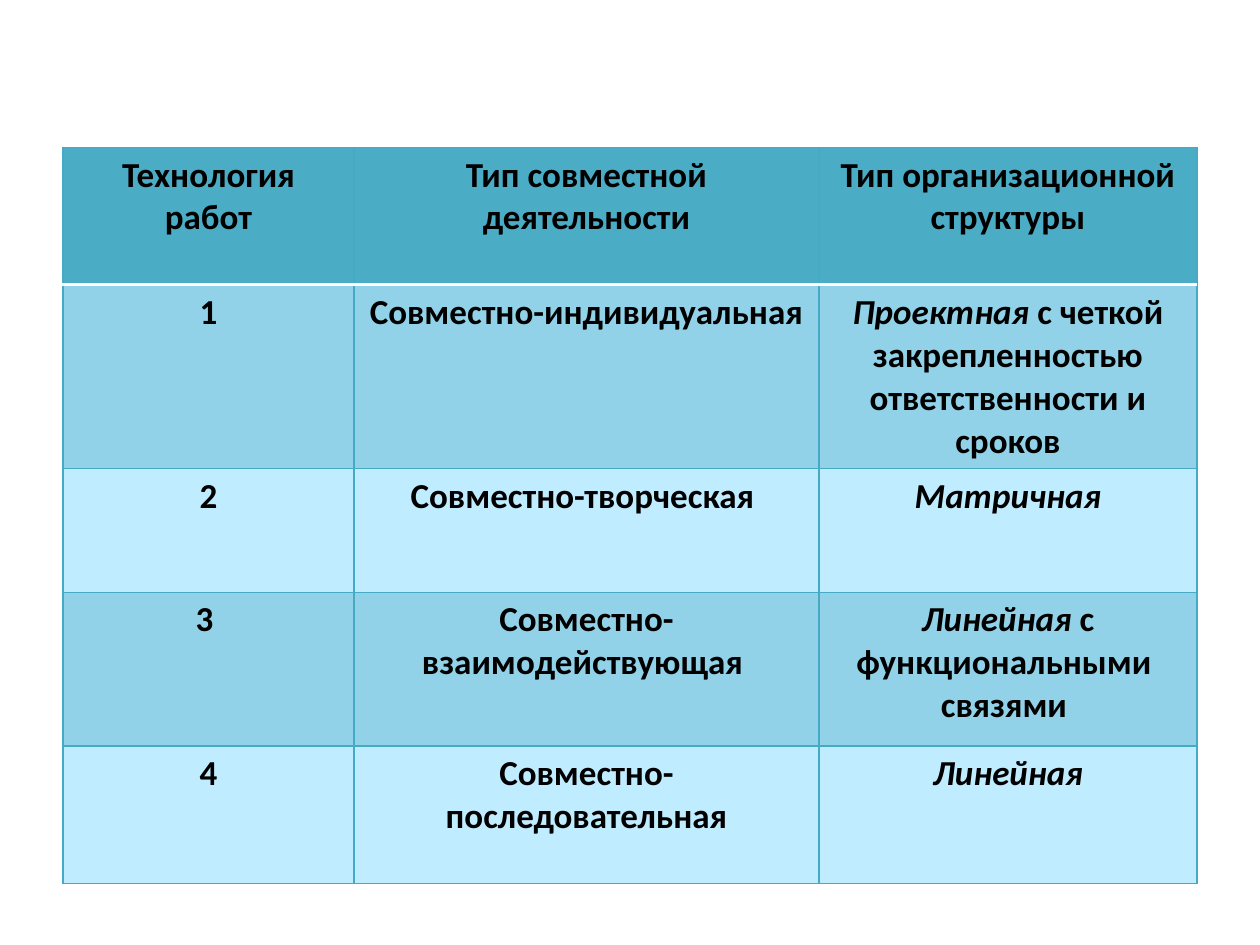
"""Builds a slide with a table matching work technology to activity and structure types."""
import pptx
import pptx.dml.color
import pptx.enum.text
import pptx.oxml
import pptx.oxml.ns
import pptx.util

Inches = pptx.util.Inches
HEADER, BAND, LIGHT = "4BACC6", "91D2E8", "C0ECFF"
GRID, WHITE, BLACK = "46AAC5", "FFFFFF", "000000"
COLUMN_WIDTHS = [2.31, 3.69, 3]
ROW_HEIGHTS = [1.09, 1.46, 0.98, 1.22, 1.09]
ROWS = [
    ["Технология работ", "Тип совместной деятельности", "Тип организационной структуры"],
    ["1", "Совместно-индивидуальная ",
     [[("Проектная ", True), ("с четкой закрепленностью ответственности и сроков", False)]]],
    ["2", "Совместно-творческая ", [[("Матричная", True)]]],
    ["3 ", "Совместно-взаимодействующая ",
     [[("Линейная ", True), ("с функциональными ", False)], [("связями ", False)]]],
    ["4", "Совместно-последовательная", [[("Линейная", True)]]],
]


def color(code):
    return pptx.dml.color.RGBColor.from_string(code)


def add_text(para, text, size=20, font="Calibri", fill=BLACK, bold=True, italic=False):
    span = para.add_run()
    span.text = text
    span.font.size = pptx.util.Pt(size)
    span.font.name = font
    span.font.color.rgb = color(fill)
    span.font.bold = bold
    span.font.italic = italic


class TableSlide:
    def __init__(self, deck):
        self.page = deck.slides.add_slide(deck.slide_layouts[6])

    def border(self, cell, position, side, code, width):
        line = pptx.oxml.parse_xml(
            f'<a:ln{side} {pptx.oxml.ns.nsdecls("a")} w="{pptx.util.Pt(width)}">'
            f'<a:solidFill><a:srgbClr val="{code}"/></a:solidFill></a:ln{side}>')
        cell._tc.get_or_add_tcPr().insert(position, line)

    def cell(self, cell, content, fill, top, bottom):
        cell.fill.solid()
        cell.fill.fore_color.rgb = color(fill)
        paragraphs = [[(content, False)]] if isinstance(content, str) else content
        frame = cell.text_frame
        for number, spans in enumerate(paragraphs):
            para = frame.add_paragraph() if number else frame.paragraphs[0]
            para.alignment = pptx.enum.text.PP_ALIGN.CENTER
            for text, italic in spans:
                add_text(para, text, italic=italic)
        grid = (GRID, 0.75)
        sides = {"L": grid, "R": grid, "T": top, "B": bottom}
        for position, (side, (code, width)) in enumerate(sides.items()):
            self.border(cell, position, side, code, width)

    def table(self, rows, left, top, widths, heights):
        frame = self.page.shapes.add_table(
            len(rows), len(widths), Inches(left), Inches(top),
            Inches(sum(widths)), Inches(sum(heights)))
        table = frame.table
        for column, width in zip(table.columns, widths):
            column.width = Inches(width)
        for index, (row, height) in enumerate(zip(rows, heights)):
            table.rows[index].height = Inches(height)
            fill = HEADER if index == 0 else BAND if index % 2 else LIGHT
            above = (WHITE, 2) if index == 1 else (GRID, 0.75)
            below = (WHITE, 2) if index == 0 else (GRID, 0.75)
            for place, content in enumerate(row):
                self.cell(table.cell(index, place), content, fill, above, below)


def main():
    deck = pptx.Presentation()
    deck.slide_width, deck.slide_height = Inches(10), Inches(7.5)
    TableSlide(deck).table(ROWS, 0.5, 1.17, COLUMN_WIDTHS, ROW_HEIGHTS)
    deck.save("out.pptx")


if __name__ == "__main__":
    main()
